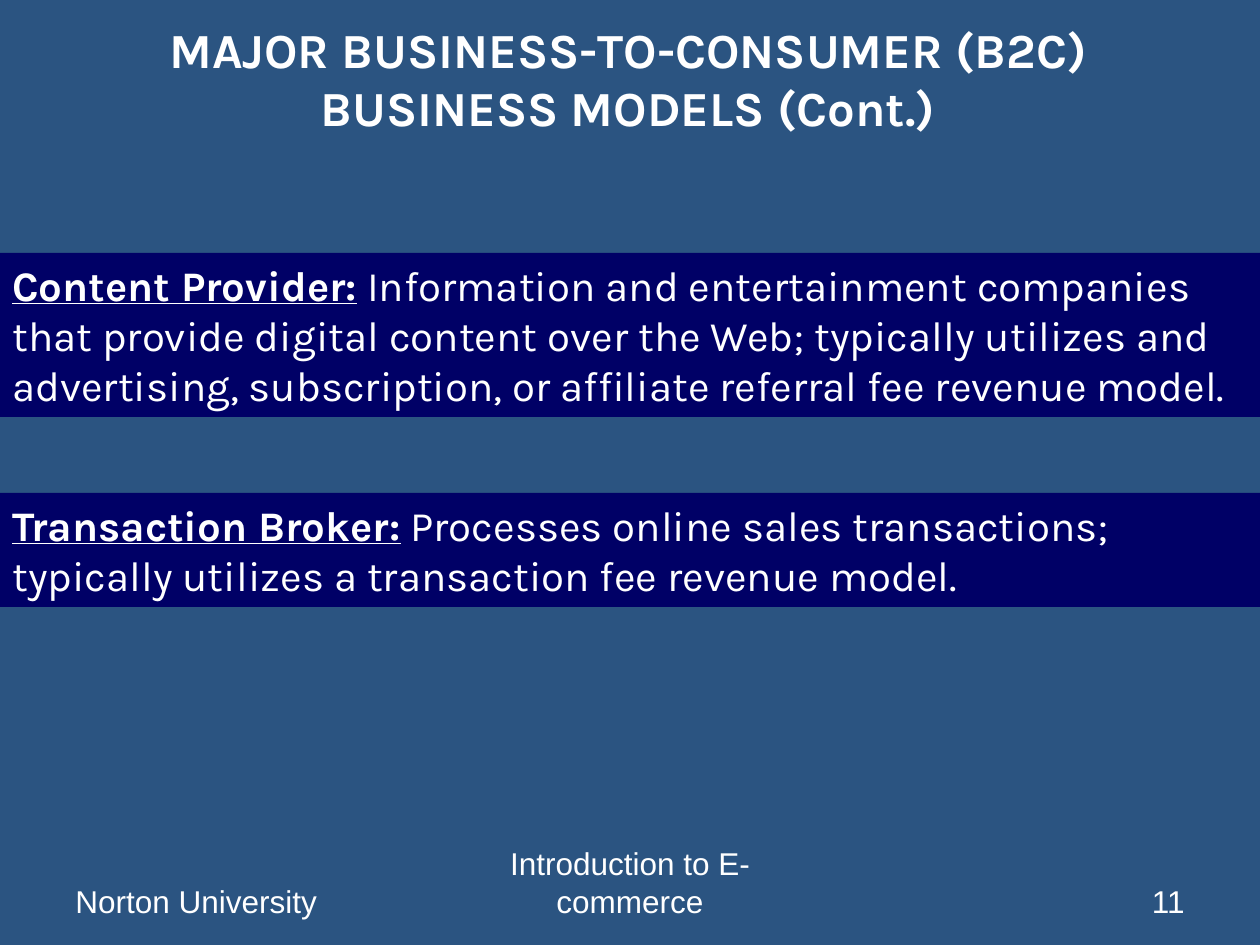
from pptx import Presentation
from pptx.dml.color import RGBColor
from pptx.enum.shapes import MSO_SHAPE as SHAPE
from pptx.enum.text import MSO_ANCHOR as ANCHOR, PP_ALIGN as ALIGN
from pptx.util import Emu, Pt

SLATE = RGBColor(0x2B, 0x54, 0x81)
NAVY = RGBColor(0x00, 0x00, 0x66)
WHITE = RGBColor(0xFF, 0xFF, 0xFF)

WIDTH, HEIGHT = 1260, 945
MODELS = [
    (253, 164, "Content Provider:",
     "Information and entertainment companies that provide digital content "
     "over the Web; typically utilizes and advertising, subscription, or "
     "affiliate referral fee revenue model."),
    (493, 114, "Transaction Broker:",
     "Processes online sales transactions; typically utilizes a transaction "
     "fee revenue model."),
]


def px(n):
    return Emu(round(n * 914400 / 126))


def style(p, name, size, align=ALIGN.LEFT, bold=None):
    p.alignment = align
    p.font.name = name
    p.font.size = Pt(size)
    p.font.bold = bold
    p.font.color.rgb = WHITE


def add_text(slide, box, text, anchor, name, size, align, bold=None):
    tf = slide.shapes.add_textbox(*map(px, box)).text_frame
    tf.word_wrap = True
    tf.vertical_anchor = anchor
    p = tf.paragraphs[0]
    p.text = text
    style(p, name, size, align, bold)


def add_title(slide, box):
    add_text(slide, box, "MAJOR BUSINESS-TO-CONSUMER (B2C) BUSINESS MODELS (Cont.)",
             ANCHOR.TOP, "Karla", 28, ALIGN.CENTER, True)


def add_model(slide, box, term, description):
    sp = slide.shapes.add_shape(SHAPE.RECTANGLE, *map(px, box))
    sp.shadow.inherit = False
    sp.fill.solid()
    sp.fill.fore_color.rgb = NAVY
    sp.line.fill.background()
    tf = sp.text_frame
    tf.word_wrap = True
    tf.vertical_anchor = ANCHOR.TOP
    p = tf.paragraphs[0]
    style(p, "Karla", 24)
    r = p.add_run()
    r.text = term
    r.font.bold = True
    r.font.underline = True
    p.add_run().text = " " + description


def add_footer(slide, box):
    left, top, width, height = box
    side, middle = 294, 400
    parts = [
        (0, side, "Norton University", ALIGN.LEFT),
        ((width - middle) / 2, middle, "Introduction to E-commerce", ALIGN.CENTER),
        (width - side, side, "11", ALIGN.RIGHT),
    ]
    for x, w, text, align in parts:
        add_text(slide, (left + x, top, w, height), text,
                 ANCHOR.BOTTOM, "Arial", 18, align)


def main():
    prs = Presentation()
    prs.slide_width, prs.slide_height = px(WIDTH), px(HEIGHT)
    slide = prs.slides.add_slide(prs.slide_layouts[6])
    slide.background.fill.solid()
    slide.background.fill.fore_color.rgb = SLATE
    add_footer(slide, (63, 861, 1134, 65))
    add_title(slide, (77, 13, 1102, 130))
    for top, height, term, description in MODELS:
        add_model(slide, (0, top, WIDTH, height), term, description)
    prs.save("out.pptx")


if __name__ == "__main__":
    main()
